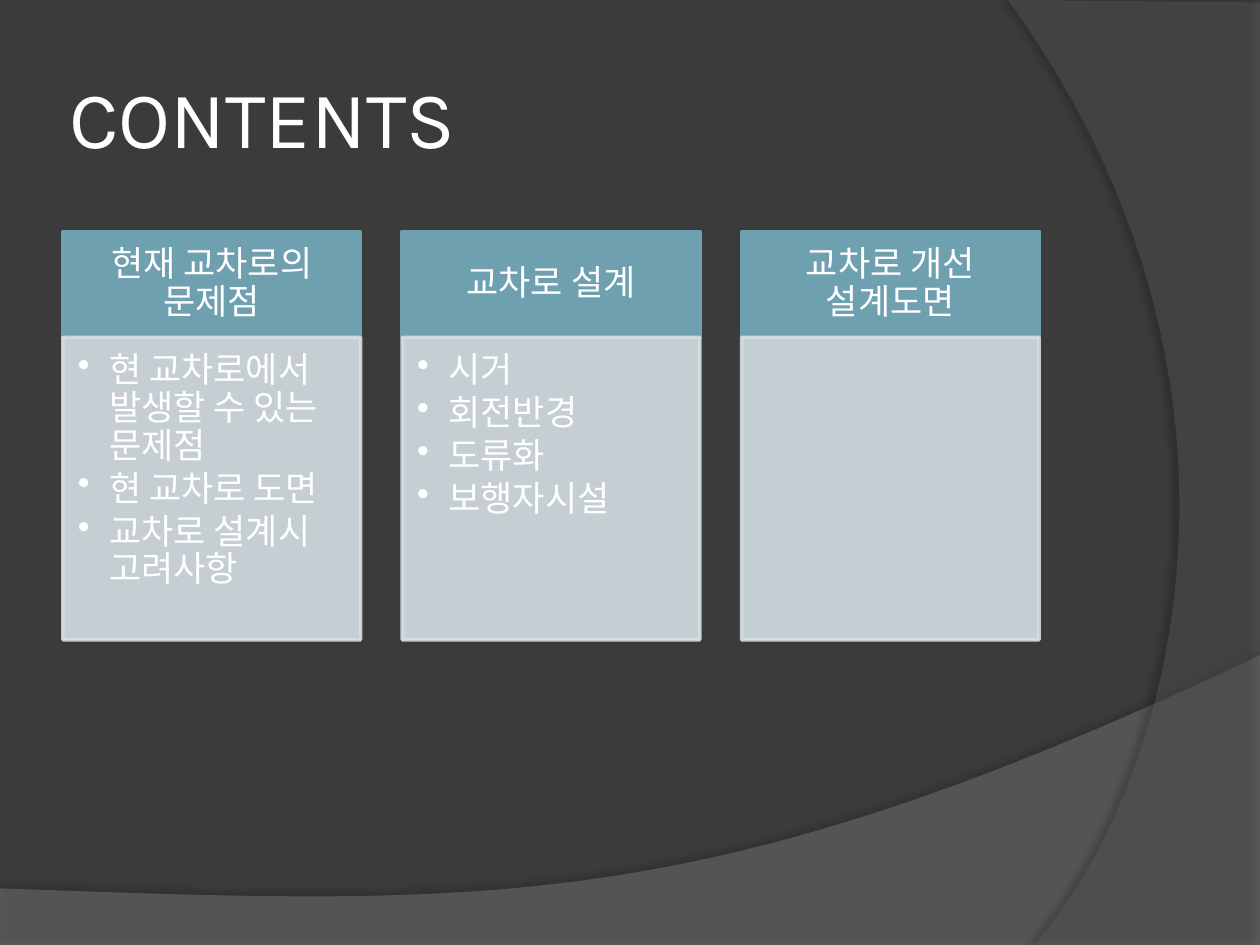
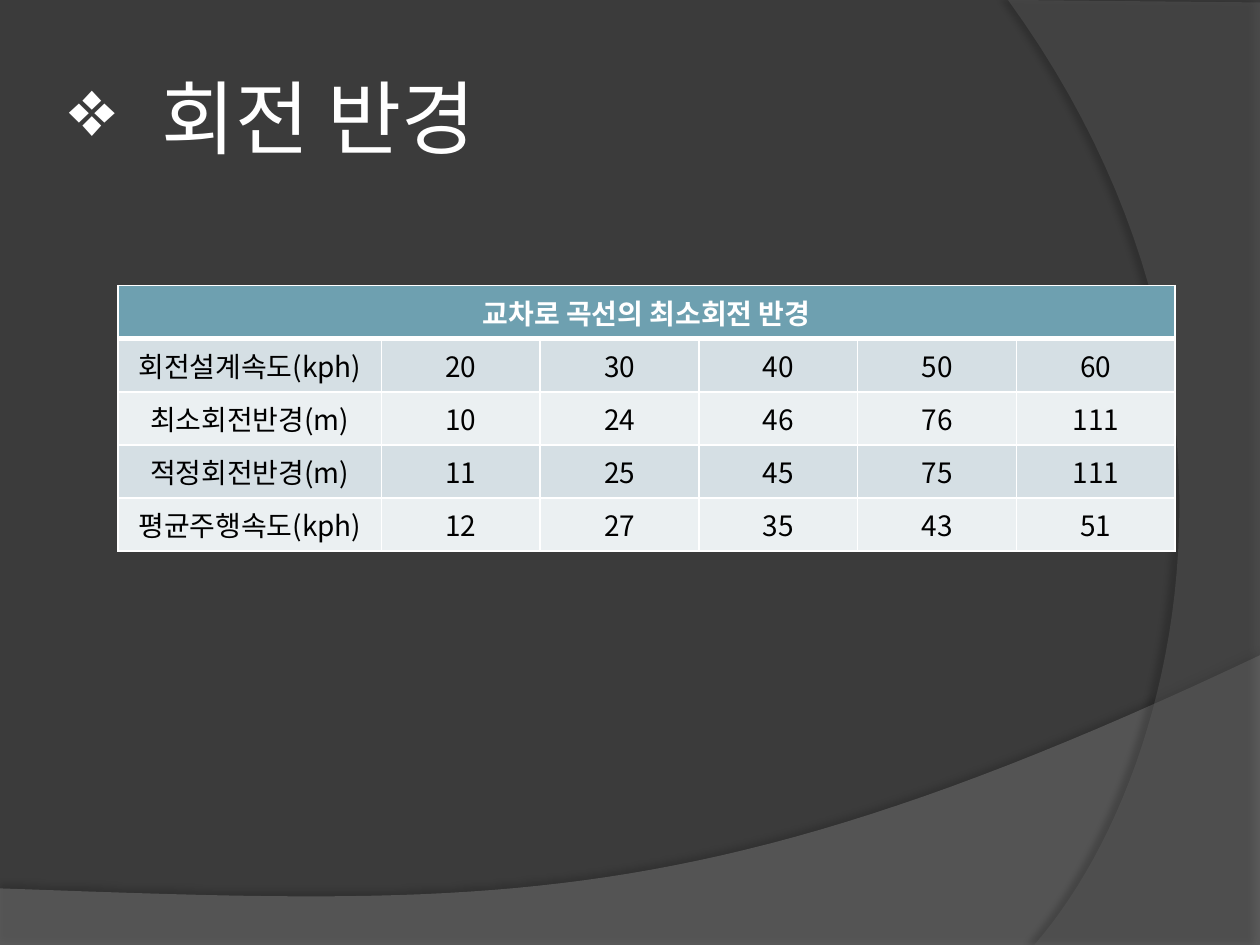
"""Build the contents slide and the turning radius slide of an intersection design talk."""
import lxml.etree
import pptx
import pptx.dml.color
import pptx.enum.shapes
import pptx.enum.text
import pptx.oxml.ns
import pptx.util

Cm = pptx.util.Cm
Pt = pptx.util.Pt
RGBColor = pptx.dml.color.RGBColor
qn = pptx.oxml.ns.qn
MIDDLE = pptx.enum.text.MSO_ANCHOR.MIDDLE
TOP = pptx.enum.text.MSO_ANCHOR.TOP
CENTER = pptx.enum.text.PP_ALIGN.CENTER
LEFT = pptx.enum.text.PP_ALIGN.LEFT

CHARCOAL = RGBColor(0x3B, 0x3B, 0x3B)
WAVE_GRAY = RGBColor(0x7F, 0x7F, 0x7F)
ARC_GRAY = RGBColor(0x5E, 0x5E, 0x5E)
TEAL = RGBColor(0x6E, 0xA0, 0xB0)
MIST = RGBColor(0xD5, 0xDF, 0xE4)
PALE = RGBColor(0xEB, 0xF0, 0xF2)
WHITE = RGBColor(0xFF, 0xFF, 0xFF)
BLACK = RGBColor(0, 0, 0)

TITLE_FONT = {"name": "Karla", "size": Pt(46)}
CARD_FONT = {"name": "Arial", "size": Pt(20)}
TABLE_FONT = {"name": "Noto Sans CJK KR", "size": Pt(16), "bold": False}
TITLE_FRAME = {"vertical_anchor": MIDDLE, "word_wrap": True,
               "auto_size": pptx.enum.text.MSO_AUTO_SIZE.NONE,
               "margin_left": Cm(0.13), "margin_right": Cm(0.13),
               "margin_top": Cm(0.13), "margin_bottom": Cm(0.13)}
HEADING_FRAME = {"vertical_anchor": MIDDLE, "word_wrap": True,
                 "margin_left": Cm(0.4), "margin_right": Cm(0.4),
                 "margin_top": Cm(0.23), "margin_bottom": Cm(0.23)}
TOPIC_FRAME = {"vertical_anchor": TOP, "word_wrap": True,
               "margin_left": Cm(0.3), "margin_right": Cm(0.4),
               "margin_top": Cm(0.3), "margin_bottom": Cm(0.43)}
HEADING_PARAGRAPH = {"alignment": CENTER, "line_spacing": 0.9}
TOPIC_PARAGRAPH = {"alignment": LEFT, "line_spacing": 0.9, "space_after": Pt(3)}


def write(paragraph, text, color, font_format, paragraph_format):
    """Add one formatted run to a paragraph."""
    run = paragraph.add_run()
    run.text = text
    run.font.color.rgb = color
    for target, values in ((run.font, font_format), (paragraph, paragraph_format)):
        for name, value in values.items():
            setattr(target, name, value)


def add_bullet(paragraph, mark, indent):
    """Give a paragraph a bullet with a hanging indent."""
    properties = paragraph._p.get_or_add_pPr()
    properties.set("marL", str(indent))
    properties.set("indent", str(-indent))
    lxml.etree.SubElement(properties, qn("a:buChar"), char=mark)


deck = pptx.Presentation()
deck.slide_width, deck.slide_height = Cm(25.4), Cm(19.05)
title_only = deck.slide_layouts[5]
title_only.background.fill.solid()
title_only.background.fill.fore_color.rgb = CHARCOAL

slides = []
for heading in ("CONTENTS", "회전 반경"):
    slide = deck.slides.add_slide(title_only)
    title = slide.shapes.title
    title.left, title.top, title.width, title.height = Cm(1.27), Cm(0.76), Cm(20.75), Cm(3.18)
    for name, value in TITLE_FRAME.items():
        setattr(title.text_frame, name, value)
    write(title.text_frame.paragraphs[0], heading, WHITE, TITLE_FONT, {"alignment": LEFT})
    slides.append(slide)
contents, turning_radius = slides
add_bullet(turning_radius.shapes.title.text_frame.paragraphs[0], "❖", Cm(1.85))

SWEEPS = [
    {"corners": [(0, 17.91), (0, 19.08), (25.4, 19.08)],
     "curve": [(25.4, 13.21), (14.2, 18.52), (9.93, 18.26), (0, 17.91)],
     "color": WAVE_GRAY, "alpha": 45, "shade": 35, "distance": 3.5, "angle": 270},
    {"corners": [(25.4, 0.05), (25.4, 19.05)],
     "curve": [(20.85, 19.05), (23.75, 15.72), (25.86, 7.62), (20.32, 0)],
     "color": ARC_GRAY, "alpha": 40, "shade": 45, "distance": 4, "angle": 180},
]
STEPS = 48
for sweep in SWEEPS:
    outline = list(sweep["corners"])
    for step in range(STEPS + 1):
        t = step / STEPS
        weights = ((1 - t) ** 3, 3 * t * (1 - t) ** 2, 3 * t ** 2 * (1 - t), t ** 3)
        outline.append(tuple(sum(w * point[axis] for w, point in zip(weights, sweep["curve"]))
                             for axis in (0, 1)))
    points = [(Cm(x), Cm(y)) for x, y in outline]
    builder = contents.shapes.build_freeform(*points[0])
    builder.add_line_segments(points[1:], close=True)
    band = builder.convert_to_shape()
    band.fill.solid()
    band.fill.fore_color.rgb = sweep["color"]
    band.line.fill.background()
    band.shadow.inherit = False
    for color in band.element.xpath("./p:spPr//a:srgbClr"):
        lxml.etree.SubElement(color, qn("a:alpha"), val=str(sweep["alpha"] * 1000))
    effects = band.element.spPr.find(qn("a:effectLst"))
    shadow = lxml.etree.SubElement(effects, qn("a:outerShdw"), blurRad=str(Pt(4)),
                                   dist=str(Pt(sweep["distance"])),
                                   dir=str(sweep["angle"] * 60000), rotWithShape="0")
    shade = lxml.etree.SubElement(shadow, qn("a:srgbClr"), val=str(BLACK))
    lxml.etree.SubElement(shade, qn("a:alpha"), val=str(sweep["shade"] * 1000))
    title_only.shapes.element.append(band.element)

CHAPTERS = [
    ("현재 교차로의 문제점",
     ["현 교차로에서 발생할 수 있는 문제점", "현 교차로 도면", "교차로 설계시 고려사항"]),
    ("교차로 설계", ["시거", "회전반경", "도류화", "보행자시설"]),
    ("교차로 개선 설계도면", []),
]
for column, (chapter, topics) in enumerate(CHAPTERS):
    left = Cm(1.27 + 6.84 * column)
    cards = []
    for top, height, color, frame in ((4.67, 2.13, TEAL, HEADING_FRAME),
                                      (6.8, 6.1, MIST, TOPIC_FRAME)):
        card = contents.shapes.add_shape(pptx.enum.shapes.MSO_SHAPE.RECTANGLE,
                                         left, Cm(top), Cm(6), Cm(height))
        card.shadow.inherit = False
        card.fill.solid()
        card.fill.fore_color.rgb = color
        card.line.color.rgb = color
        card.line.width = Pt(2)
        for name, value in frame.items():
            setattr(card.text_frame, name, value)
        cards.append(card)
    chapter_card, topic_card = cards
    for color in topic_card.element.xpath("./p:spPr//a:srgbClr"):
        lxml.etree.SubElement(color, qn("a:alpha"), val="90000")
    write(chapter_card.text_frame.paragraphs[0], chapter, WHITE, CARD_FONT, HEADING_PARAGRAPH)
    for index, topic in enumerate(topics):
        lines = topic_card.text_frame
        paragraph = lines.add_paragraph() if index else lines.paragraphs[0]
        write(paragraph, topic, WHITE, CARD_FONT, TOPIC_PARAGRAPH)
        add_bullet(paragraph, "•", Cm(0.63))

RADIUS_ROWS = [
    ["교차로 곡선의 최소회전 반경", "", "", "", "", ""],
    ["회전설계속도(kph)", "20", "30", "40", "50", "60"],
    ["최소회전반경(m)", "10", "24", "46", "76", "111"],
    ["적정회전반경(m)", "11", "25", "45", "75", "111"],
    ["평균주행속도(kph)", "12", "27", "35", "43", "51"],
]
COLUMN_WIDTHS = [5.31] + [3.2] * 5
ROW_HEIGHT = 1.07
radius_table = turning_radius.shapes.add_table(
    len(RADIUS_ROWS), len(COLUMN_WIDTHS), Cm(2.38), Cm(5.76),
    Cm(sum(COLUMN_WIDTHS)), Cm(ROW_HEIGHT * len(RADIUS_ROWS))).table
for column, width in zip(radius_table.columns, COLUMN_WIDTHS):
    column.width = Cm(width)
radius_table.cell(0, 0).merge(radius_table.cell(0, len(COLUMN_WIDTHS) - 1))

for r, values in enumerate(RADIUS_ROWS):
    radius_table.rows[r].height = Cm(ROW_HEIGHT)
    is_header = r == 0
    row_fill = TEAL if is_header else (MIST if r % 2 else PALE)
    for c, value in enumerate(values):
        cell = radius_table.cell(r, c)
        cell.vertical_anchor = MIDDLE
        cell.fill.solid()
        cell.fill.fore_color.rgb = row_fill
        if value:
            write(cell.text_frame.paragraphs[0], value, WHITE if is_header else BLACK,
                  {**TABLE_FONT, "bold": is_header}, {"alignment": CENTER})
        borders = {"a:lnL": 1, "a:lnR": 1, "a:lnT": 3 if r == 1 else 1,
                   "a:lnB": 3 if is_header else 1}
        for position, (side, weight) in enumerate(borders.items()):
            border = lxml.etree.Element(qn(side), w=str(Pt(weight)))
            paint = lxml.etree.SubElement(border, qn("a:solidFill"))
            lxml.etree.SubElement(paint, qn("a:srgbClr"), val=str(WHITE))
            cell._tc.get_or_add_tcPr().insert(position, border)

deck.save("out.pptx")
